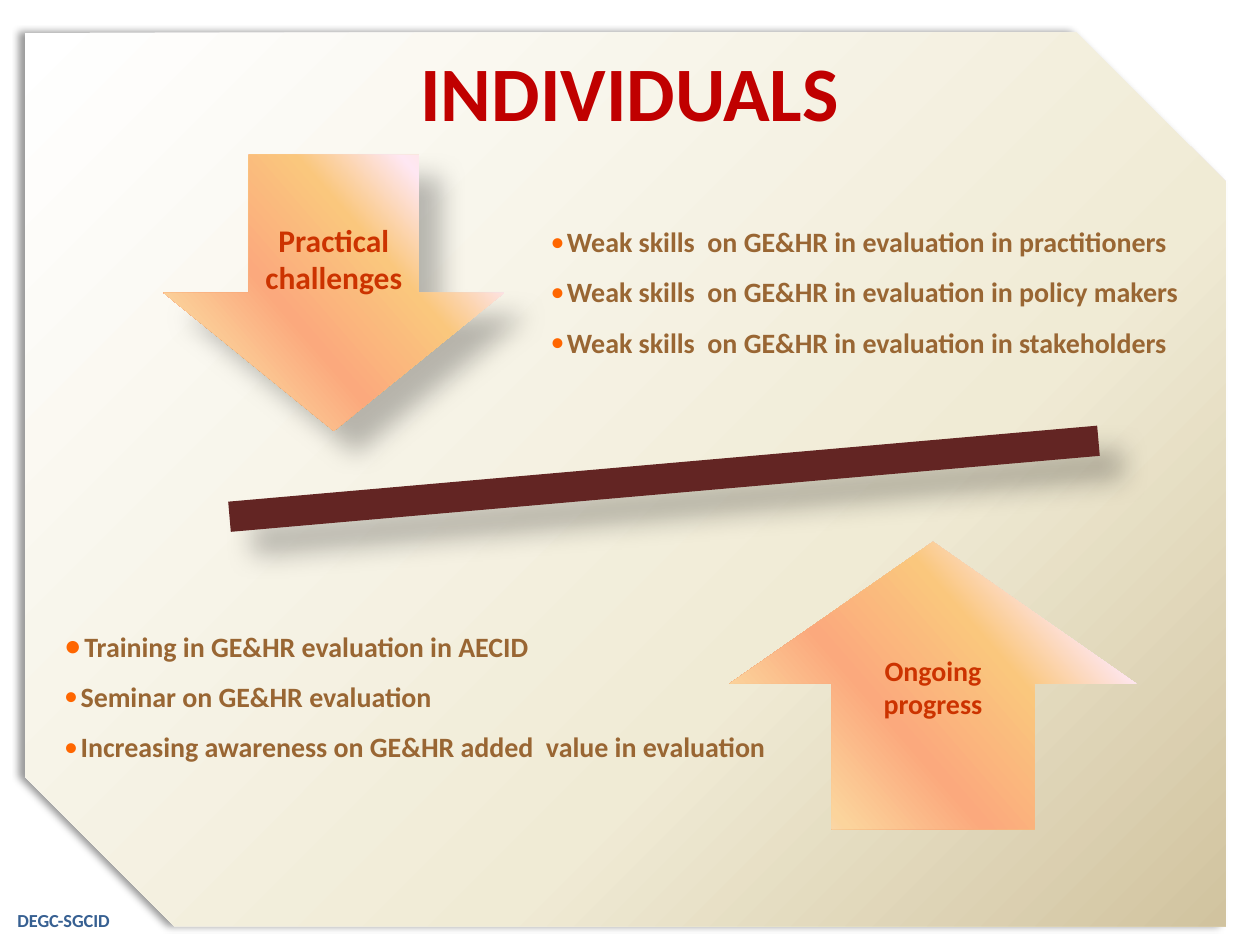
from lxml.etree import SubElement
from pptx import Presentation
from pptx.dml.color import RGBColor
from pptx.enum.shapes import MSO_SHAPE
from pptx.enum.text import MSO_ANCHOR, PP_ALIGN
from pptx.oxml.ns import qn
from pptx.util import Inches, Pt

COLORS = {
    "title": "C00000", "footer": "376092", "arrow_text": "CC3300",
    "bullet": "FF6600", "item": "996633", "bar": "632523", "shadow": "000000",
}
PAPER = [(0, "FFFFFF"), (65, "F0EBD5"), (100, "D1C39F")]
SUNSET = [(0, "FBEAC7"), (18, "FEE7F2"), (36, "FAC77D"),
          (61, "FBA97D"), (82, "FBD49C"), (100, "FEE7F2")]
DEEP_SHADOW = (26, 15, 18, 45)


def write(paragraph, text, size, color):
    run = paragraph.add_run()
    run.text = text
    run.font.name = "Calibri"
    run.font.size = Pt(size)
    run.font.bold = True
    run.font.color.rgb = RGBColor.from_string(COLORS[color])


def decorate(shape, stops=None, angle=0, shadow=None):
    shape.line.fill.background()
    shape.shadow.inherit = False
    properties = shape._element.spPr
    if stops:
        shape.fill.background()
        blank = properties.find(qn("a:noFill"))
        gradient = SubElement(properties, qn("a:gradFill"), rotWithShape="1")
        properties.replace(blank, gradient)
        stop_list = SubElement(gradient, qn("a:gsLst"))
        for position, color in stops:
            stop = SubElement(stop_list, qn("a:gs"), pos=str(position * 1000))
            SubElement(stop, qn("a:srgbClr"), val=color)
        SubElement(gradient, qn("a:lin"), ang=str(angle * 60000), scaled="0")
    if shadow:
        alpha, blur, distance, direction = shadow
        outer = SubElement(
            properties.find(qn("a:effectLst")), qn("a:outerShdw"),
            blurRad=str(Pt(blur)), dist=str(Pt(distance)),
            dir=str(direction * 60000), algn="tl", rotWithShape="0")
        tint = SubElement(outer, qn("a:srgbClr"), val=COLORS["shadow"])
        SubElement(tint, qn("a:alpha"), val=str(alpha * 1000))


prs = Presentation()
prs.slide_width, prs.slide_height = Inches(10), Inches(7.5)
slide = prs.slides.add_slide(prs.slide_layouts[5])
shapes = slide.shapes

footer = shapes.add_textbox(Inches(0.04), Inches(7.17), Inches(1.1), Inches(0.28))
footer.text_frame.word_wrap = True
write(footer.text_frame.paragraphs[0], "DEGC-SGCID", 10.5, "footer")

panel = shapes.add_shape(MSO_SHAPE.SNIP_2_DIAG_RECTANGLE, Inches(0.2), Inches(0.26),
                         Inches(9.53), Inches(7.09))
panel.adjustments[0], panel.adjustments[1] = 0, 0.167
decorate(panel, PAPER, 45, (40, 4, 3, 180))

title = shapes.title
title.left, title.top = Inches(0.5), Inches(0.3)
title.width, title.height = Inches(9), Inches(1.25)
title.text_frame.vertical_anchor = MSO_ANCHOR.TOP
title.text_frame.paragraphs[0].alignment = PP_ALIGN.CENTER
write(title.text_frame.paragraphs[0], "INDIVIDUALS", 44, "title")
shapes._spTree.append(title._element)

arrows = [
    (MSO_SHAPE.UP_ARROW, 5.79, 4.3, 3.23, 2.28, 0.494, None,
     "Ongoing progress", 16, MSO_ANCHOR.TOP, 0.32),
    (MSO_SHAPE.DOWN_ARROW, 1.3, 1.23, 2.7, 2.19, 0.5, DEEP_SHADOW,
     "Practical challenges", 18, MSO_ANCHOR.MIDDLE, 0.05),
]
for kind, left, top, width, height, head, shadow, label, size, anchor, inset in arrows:
    arrow = shapes.add_shape(kind, Inches(left), Inches(top), Inches(width), Inches(height))
    arrow.adjustments[0], arrow.adjustments[1] = 0.5, head
    decorate(arrow, SUNSET, 139, shadow)
    frame = arrow.text_frame
    frame.word_wrap = True
    frame.vertical_anchor = anchor
    frame.margin_top = Inches(inset)
    frame.paragraphs[0].alignment = PP_ALIGN.CENTER
    write(frame.paragraphs[0], label, size, "arrow_text")

bar = shapes.add_shape(MSO_SHAPE.MATH_MINUS, Inches(0.56), Inches(3.29),
                       Inches(9.42), Inches(1.02))
bar.rotation = 355
bar.fill.solid()
bar.fill.fore_color.rgb = RGBColor.from_string(COLORS["bar"])
decorate(bar, shadow=DEEP_SHADOW)

lists = [
    (4.21, 1.49, 5.35, [
        ("Weak skills  on GE&HR in evaluation in practitioners", 100, 0.13),
        ("Weak skills  on GE&HR in evaluation in policy makers", 100, 0.13),
        ("Weak skills  on GE&HR in evaluation in stakeholders", 100, 0.13)]),
    (0.35, 4.7, 5.98, [
        ("Training in GE&HR evaluation in AECID", 125, 0.16),
        ("Seminar on GE&HR evaluation", 100, 0.13),
        ("Increasing awareness on GE&HR added  value in evaluation", 100, 0.13)]),
]
for left, top, width, items in lists:
    points = shapes.add_textbox(Inches(left), Inches(top), Inches(width), Inches(1.62))
    frame = points.text_frame
    frame.word_wrap = True
    frame.margin_left = frame.margin_right = Inches(0.16)
    frame.margin_top = frame.margin_bottom = Inches(0.16)
    for index, (item, bullet_size, indent) in enumerate(items):
        paragraph = frame.add_paragraph() if index else frame.paragraphs[0]
        paragraph.line_spacing = 1.5
        settings = paragraph._p.get_or_add_pPr()
        settings.set("marL", str(Inches(indent)))
        settings.set("indent", str(-Inches(indent)))
        bullet_color = SubElement(settings, qn("a:buClr"))
        SubElement(bullet_color, qn("a:srgbClr"), val=COLORS["bullet"])
        SubElement(settings, qn("a:buSzPct"), val=str(bullet_size * 1000))
        SubElement(settings, qn("a:buFont"), typeface="Calibri")
        SubElement(settings, qn("a:buChar"), char="•")
        write(paragraph, item, 16, "item")

prs.save("out.pptx")
